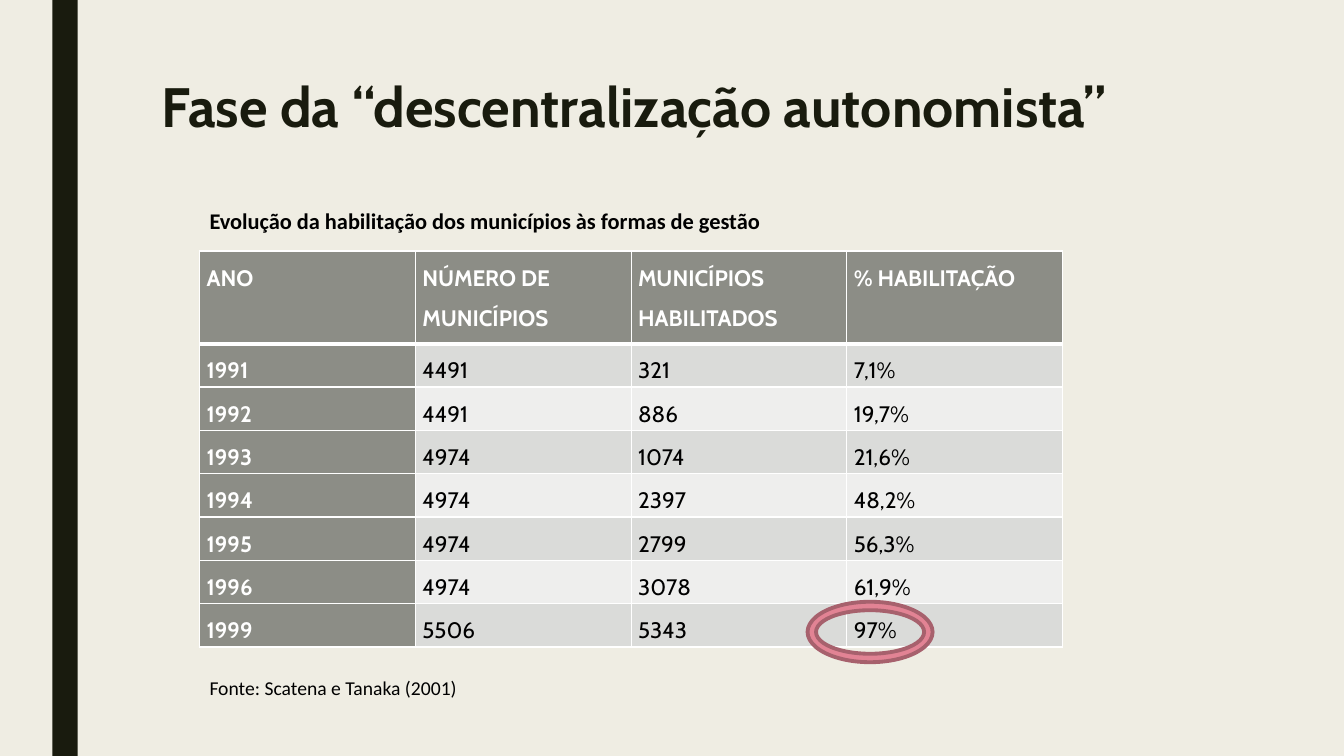
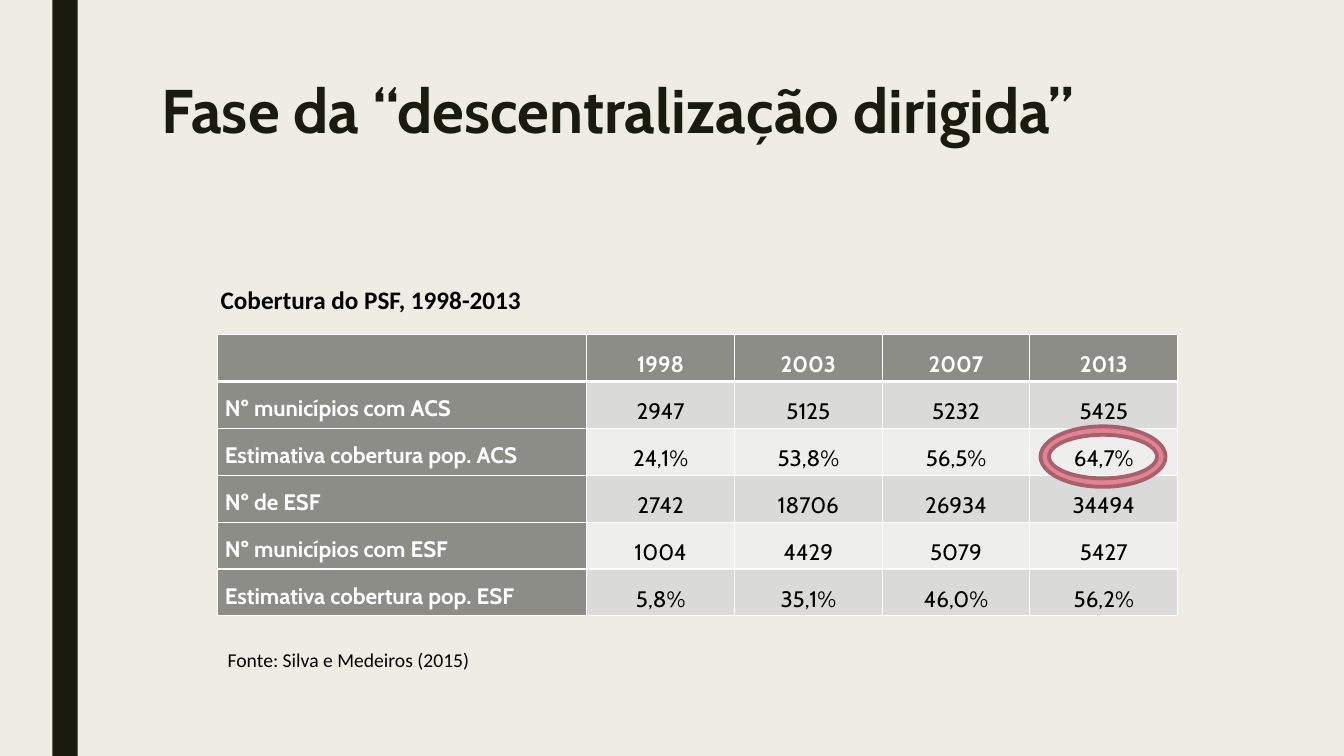
from pptx import Presentation
from pptx.dml.color import RGBColor
from pptx.enum.shapes import MSO_SHAPE
from pptx.enum.text import MSO_ANCHOR, MSO_AUTO_SIZE, PP_ALIGN
from pptx.oxml import parse_xml
from pptx.oxml.ns import nsdecls
from pptx.util import Inches, Pt

LEFT, CENTER, JUSTIFY = PP_ALIGN.LEFT, PP_ALIGN.CENTER, PP_ALIGN.JUSTIFY
TOP, MIDDLE = MSO_ANCHOR.TOP, MSO_ANCHOR.MIDDLE
RECTANGLE, DONUT = MSO_SHAPE.RECTANGLE, MSO_SHAPE.DONUT
NO_FIT = MSO_AUTO_SIZE.NONE

CREAM = RGBColor(0xEF, 0xED, 0xE3)
DARK = RGBColor(0x19, 0x1B, 0x0E)
GRAY = RGBColor(0x8C, 0x8D, 0x86)
BAND_ODD = RGBColor(0xDA, 0xDB, 0xD9)
BAND_EVEN = RGBColor(0xEE, 0xEE, 0xED)
PINK = RGBColor(0xE2, 0x83, 0x94)
WINE = RGBColor(0xA7, 0x61, 0x6D)
WHITE = RGBColor(0xFF, 0xFF, 0xFF)
BLACK = RGBColor(0, 0, 0)

SLIDES = [
    {
        "title": "Fase da “descentralização autonomista”",
        "title_size": 39.6,
        "caption": ("Evolução da habilitação dos municípios às formas de gestão",
                    1.98, 2, 0.37, 16, True),
        "source": ("Fonte: Scatena e Tanaka (2001)", 1.98, 6.65, 0.34, 14, False),
        "table_at": (1.98, 2.49),
        "cols": [2.14] * 4,
        "heights": [0.92] + [0.43] * 7,
        "centered": False,
        "ring_at": (8.01, 5.97),
        "rows": [
            ["ANO", "NÚMERO DE MUNICÍPIOS", "MUNICÍPIOS HABILITADOS", "% HABILITAÇÃO"],
            ["1991", "4491", "321", "7,1%"],
            ["1992", "4491", "886", "19,7%"],
            ["1993", "4974", "1074", "21,6%"],
            ["1994", "4974", "2397", "48,2%"],
            ["1995", "4974", "2799", "56,3%"],
            ["1996", "4974", "3078", "61,9%"],
            ["1999", "5506", "5343", "97%"],
        ],
    },
    {
        "title": "Fase da “descentralização dirigida”",
        "title_size": 44,
        "caption": ("Cobertura do PSF, 1998-2013", 2.09, 2.77, 0.4, 18, True),
        "source": ("Fonte: Silva e Medeiros (2015)", 2.16, 6.37, 0.34, 14, False),
        "table_at": (2.16, 3.32),
        "cols": [3.66] + [1.465] * 4,
        "heights": [0.465] * 6,
        "centered": True,
        "ring_at": (10.32, 4.23),
        "rows": [
            ["", "1998", "2003", "2007", "2013"],
            ["Nº municípios com ACS", "2947", "5125", "5232", "5425"],
            ["Estimativa cobertura pop. ACS", "24,1%", "53,8%", "56,5%", "64,7%"],
            ["Nº de ESF", "2742", "18706", "26934", "34494"],
            ["Nº municípios com ESF", "1004", "4429", "5079", "5427"],
            ["Estimativa cobertura pop. ESF", "5,8%", "35,1%", "46,0%", "56,2%"],
        ],
    },
]


def add_run(p, text, font, size, color, bold):
    r = p.add_run()
    r.text = text
    r.font.name = font
    r.font.size = Pt(size)
    r.font.color.rgb = color
    r.font.bold = bold


def set_borders(cell, row):
    tcPr = cell._tc.get_or_add_tcPr()
    thick = {0: "lnB", 1: "lnT"}.get(row)
    for side in ("lnL", "lnR", "lnT", "lnB"):
        width = Pt(3 if side == thick else 1)
        tcPr.append(parse_xml(
            f'<a:{side} {nsdecls("a")} w="{width}"><a:solidFill>'
            f'<a:srgbClr val="{WHITE}"/></a:solidFill></a:{side}>'))


prs = Presentation()
prs.slide_width = Inches(13.33)
prs.slide_height = Inches(7.5)

master = prs.slide_master
master.background.fill.solid()
master.background.fill.fore_color.rgb = CREAM

layout = prs.slide_layouts[5]
title = layout.placeholders[0]
title.left, title.top = Inches(1.5), Inches(0.75)
title.width, title.height = Inches(10.5), Inches(1.62)
title.text_frame.vertical_anchor = TOP

for n, data in enumerate(SLIDES):
    s = prs.slides.add_slide(layout)

    if n == 0:
        band = s.shapes.add_shape(RECTANGLE, Inches(0.52), 0, Inches(0.25), prs.slide_height)
        band.shadow.inherit = False
        band.fill.solid()
        band.fill.fore_color.rgb = DARK
        band.line.fill.background()
        master.shapes.element.append(band.element)

    tf = s.shapes.title.text_frame
    tf.auto_size = NO_FIT
    p = tf.paragraphs[0]
    p.alignment = LEFT
    p.line_spacing = 0.89
    add_run(p, data["title"], "Cabin", data["title_size"], DARK, True)

    rows, cols, heights = data["rows"], data["cols"], data["heights"]
    x, y = data["table_at"]
    table = s.shapes.add_table(len(rows), len(cols), Inches(x), Inches(y),
                               Inches(sum(cols)), Inches(sum(heights))).table
    for col, width in zip(table.columns, cols):
        col.width = Inches(width)
    for i, values in enumerate(rows):
        table.rows[i].height = Inches(heights[i])
        for j, value in enumerate(values):
            cell = table.cell(i, j)
            heading = i == 0 or j == 0
            centered = data["centered"] and j > 0
            set_borders(cell, i)
            cell.fill.solid()
            cell.fill.fore_color.rgb = GRAY if heading else BAND_ODD if i % 2 else BAND_EVEN
            cell.margin_left = cell.margin_right = Inches(0.07)
            cell.margin_top = cell.margin_bottom = 0
            cell.vertical_anchor = MIDDLE if centered else TOP
            p = cell.text_frame.paragraphs[0]
            p.alignment = CENTER if centered else LEFT if i == 0 else JUSTIFY
            p.line_spacing = 1.5
            if value:
                add_run(p, value, "Cabin", 16, WHITE if heading else BLACK, heading)

    for text, x, y, height, size, bold in (data["caption"], data["source"]):
        box = s.shapes.add_textbox(Inches(x), Inches(y), Inches(6.5), Inches(height))
        tf = box.text_frame
        tf.word_wrap = True
        tf.vertical_anchor = MIDDLE
        p = tf.paragraphs[0]
        p.alignment = JUSTIFY
        add_run(p, text, "Calibri", size, BLACK, bold)

    x, y = data["ring_at"]
    ring = s.shapes.add_shape(DONUT, Inches(x), Inches(y), Inches(1.24), Inches(0.6))
    ring.shadow.inherit = False
    ring.adjustments[0] = 0.14
    ring.fill.solid()
    ring.fill.fore_color.rgb = PINK
    ring.line.color.rgb = WINE
    ring.line.width = Pt(2.75)

prs.save("out.pptx")
